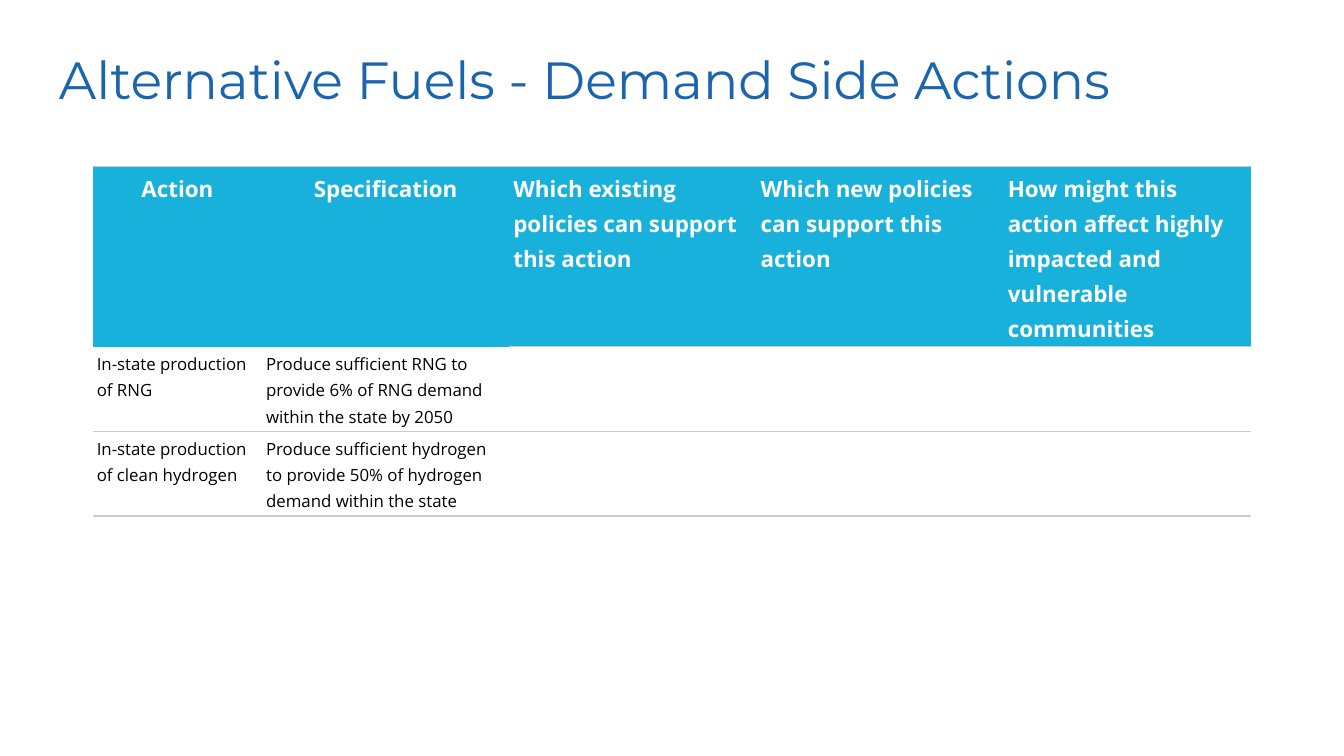
from dataclasses import dataclass

from lxml.etree import SubElement
from pptx import Presentation
from pptx.dml.color import RGBColor
from pptx.enum.text import MSO_ANCHOR, PP_ALIGN as Align
from pptx.oxml.ns import qn
from pptx.util import Inches, Pt

BLUE = RGBColor(0x1B, 0x65, 0xAC)
CYAN = RGBColor(0x17, 0xB1, 0xDC)
GREY = RGBColor(0xCC, 0xCC, 0xCC)
WHITE = RGBColor(0xFF, 0xFF, 0xFF)
BLACK = RGBColor(0, 0, 0)


@dataclass(frozen=True)
class CellStyle:
    size: int
    color: RGBColor
    bold: bool
    fill: RGBColor | None


HEADER = CellStyle(12, WHITE, True, CYAN)
BODY = CellStyle(9, BLACK, False, None)

COL_WIDTHS = [1.26] + [1.84] * 4
ROW_HEIGHTS = [1.34, 0.63, 0.63]
ROWS = [
    ["Action", "Specification",
     "Which existing policies can support this action",
     "Which new policies can support this action",
     "How might this action affect highly impacted and vulnerable communities"],
    ["In-state production of RNG",
     "Produce sufficient RNG to provide 6% of RNG demand within the state by 2050",
     "", "", ""],
    ["In-state production of clean hydrogen",
     "Produce sufficient hydrogen to provide 50% of hydrogen demand within the state",
     "", "", ""],
]


def add_run(p, text: str, font: str, size: int, color: RGBColor, bold: bool = False) -> None:
    r = p.add_run()
    r.text = text
    r.font.name = font
    r.font.size = Pt(size)
    r.font.bold = bold
    r.font.color.rgb = color


def set_borders(cell, ruled: set[str]) -> None:
    """Rule the named sides in grey and clear the others."""
    tc_pr = cell._tc.get_or_add_tcPr()
    for side in "LRTB":
        ln = SubElement(tc_pr, qn(f"a:ln{side}"), w=str(Pt(0.75)))
        if side in ruled:
            fill = SubElement(ln, qn("a:solidFill"))
            SubElement(fill, qn("a:srgbClr"), val=str(GREY))
        else:
            SubElement(ln, qn("a:noFill"))


def fill_cell(cell, text: str, style: CellStyle, align: Align, ruled: set[str]) -> None:
    cell.margin_left = cell.margin_right = Inches(0.03)
    cell.margin_top = cell.margin_bottom = Inches(0.02)
    set_borders(cell, ruled)
    if style.fill is None:
        cell.fill.background()
    else:
        cell.fill.solid()
        cell.fill.fore_color.rgb = style.fill
    p = cell.text_frame.paragraphs[0]
    p.alignment = align
    p.line_spacing = 1.15
    if text:
        add_run(p, text, "Open Sans", style.size, style.color, style.bold)


def add_title(s, text: str) -> None:
    tf = s.shapes.add_textbox(Inches(0.34), Inches(0.25), Inches(9.14), Inches(0.63)).text_frame
    tf.word_wrap = True
    tf.vertical_anchor = MSO_ANCHOR.TOP
    tf.margin_left = tf.margin_right = tf.margin_top = tf.margin_bottom = Inches(0.1)
    add_run(tf.paragraphs[0], text, "Montserrat", 28, BLUE)


def add_actions_table(s) -> None:
    table = s.shapes.add_table(len(ROWS), len(COL_WIDTHS), Inches(0.69), Inches(1.24),
                               Inches(sum(COL_WIDTHS)), Inches(sum(ROW_HEIGHTS))).table
    table.first_row = table.horz_banding = False
    for column, width in zip(table.columns, COL_WIDTHS):
        column.width = Inches(width)
    for row, height in zip(table.rows, ROW_HEIGHTS):
        row.height = Inches(height)

    for i, texts in enumerate(ROWS):
        for j, text in enumerate(texts):
            is_header, is_label = i == 0, j < 2
            # The two label columns have no rule under the header
            ruled = {"T", "B"}
            if is_label and is_header:
                ruled.remove("B")
            elif is_label and i == 1:
                ruled.remove("T")
            align = Align.CENTER if is_header and is_label else Align.LEFT
            fill_cell(table.cell(i, j), text, HEADER if is_header else BODY, align, ruled)


def main() -> None:
    prs = Presentation()
    # Widescreen, 16:9
    prs.slide_width, prs.slide_height = Inches(10), Inches(10 * 9 / 16)
    s = prs.slides.add_slide(prs.slide_layouts[6])

    # Title
    add_title(s, "Alternative Fuels - Demand Side Actions")

    # Actions and their policies
    add_actions_table(s)

    prs.save("out.pptx")


if __name__ == "__main__":
    main()
